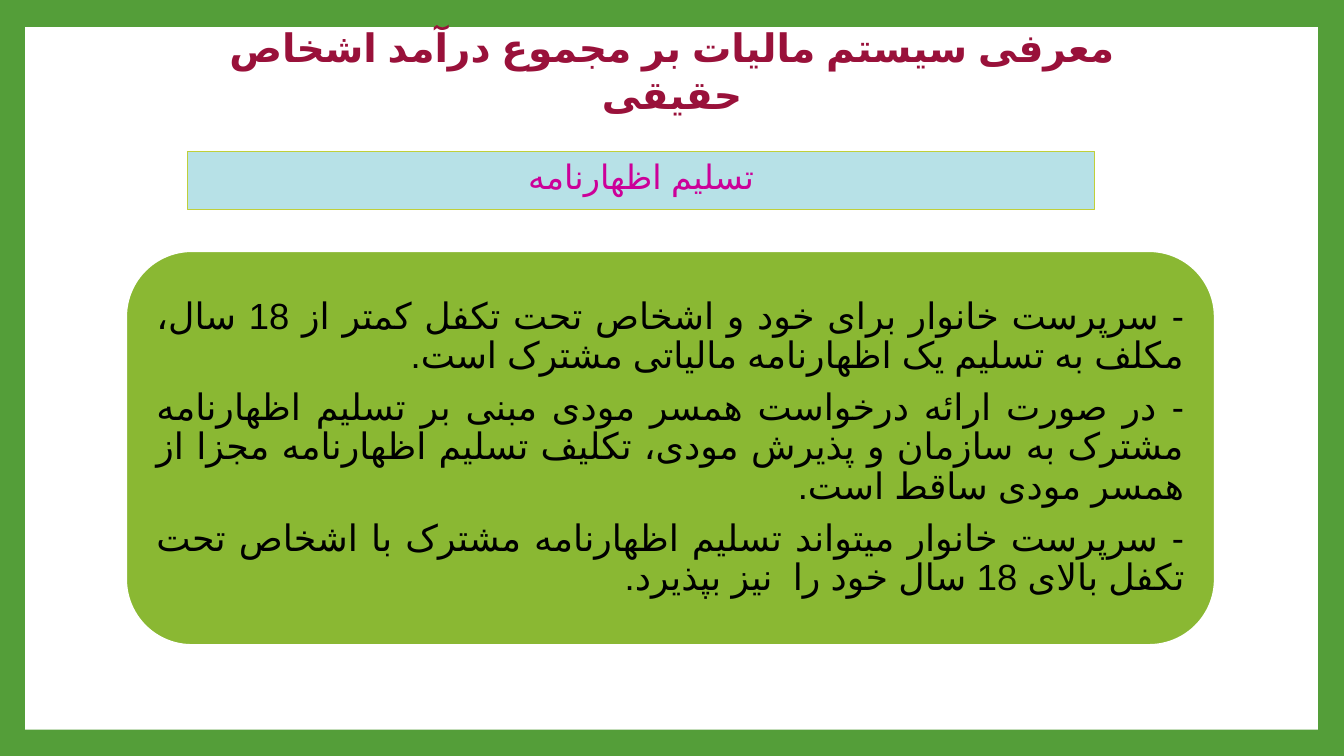
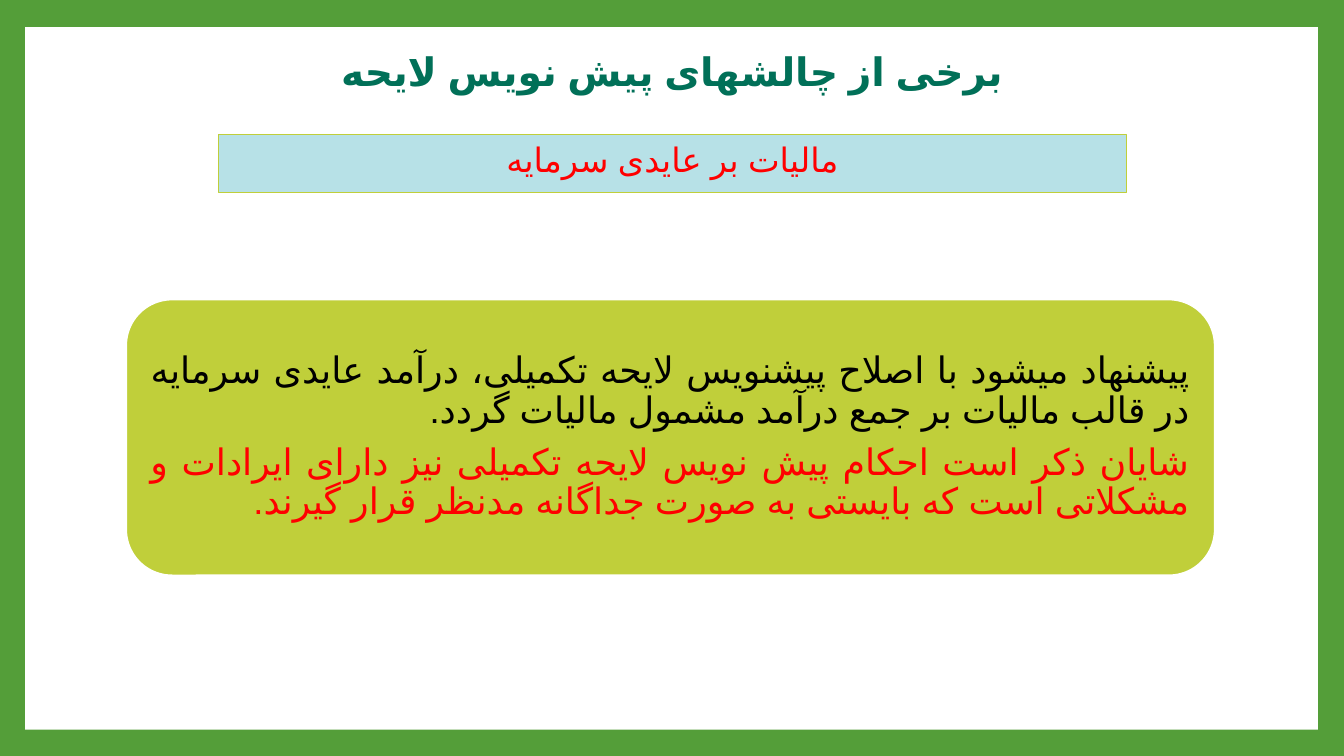
from pptx import Presentation
from pptx.dml.color import RGBColor
from pptx.enum.shapes import MSO_SHAPE as SHAPE
from pptx.enum.text import MSO_ANCHOR as ANCHOR, PP_ALIGN as ALIGN
from pptx.oxml.ns import qn
from pptx.util import Inches, Pt
from lxml import etree

SLIDE_W, SLIDE_H = 13.33, 7.5
GREEN, WHITE, LIME, SKY = "549E39", "FFFFFF", "C0CF3A", "B7E1E7"
OLIVE, BLACK, RED = "8AB833", "000000", "FF0000"
MAGENTA, WINE, TEAL = "CC0099", "99113A", "017058"
TITLE_FONT, BAND_FONT = "Arial Narrow", "Calibri"
ARABIC_FONT = "Arial"
HEADING_W, HEADING_H = 9, 0.58
CARD_X, CARD_W = 1.25, 10.8

SLIDES = [
    dict(
        title=("معرفی سیستم مالیات بر مجموع درآمد اشخاص حقیقی", WINE),
        band=("تسلیم اظهارنامه", MAGENTA), band_at=(1.86, 1.5),
        card_top=2.49, card_height=3.91, card_fill=OLIVE, card_font="Calibri",
        card=[
            ("- سرپرست خانوار برای خود و اشخاص تحت تکفل کمتر از 18 سال، "
             "مکلف به تسلیم یک اظهارنامه مالیاتی مشترک است.", BLACK),
            ("- در صورت ارائه درخواست همسر مودی مبنی بر تسلیم اظهارنامه "
             "مشترک به سازمان و پذیرش مودی، تکلیف تسلیم اظهارنامه مجزا از "
             "همسر مودی ساقط است.", BLACK),
            ("- سرپرست خانوار میتواند تسلیم اظهارنامه مشترک با اشخاص تحت "
             "تکفل بالای 18 سال خود را  نیز بپذیرد.", BLACK),
        ],
    ),
    dict(
        title=("برخی از چالشهای پیش نویس لایحه", TEAL),
        band=("مالیات بر عایدی سرمایه", RED), band_at=(2.17, 1.33),
        card_top=2.97, card_height=2.74, card_fill=LIME,
        card_font="Times New Roman",
        card=[
            ("پیشنهاد میشود با اصلاح پیشنویس لایحه تکمیلی، درآمد عایدی "
             "سرمایه در قالب مالیات بر جمع درآمد مشمول مالیات گردد.", BLACK),
            ("شایان ذکر است احکام پیش نویس لایحه تکمیلی نیز دارای ایرادات و "
             "مشکلاتی است که بایستی به صورت جداگانه مدنظر قرار گیرند.", RED),
        ],
    ),
]


def rgb(color):
    return RGBColor.from_string(color)


def add_box(s, kind, box, fill, line=None, width=0):
    sp = s.shapes.add_shape(kind, *map(Inches, box))
    sp.shadow.inherit = False
    sp.fill.solid()
    sp.fill.fore_color.rgb = rgb(fill)
    if line:
        sp.line.color.rgb = rgb(line)
        sp.line.width = Pt(width)
    else:
        sp.line.fill.background()
    return sp


def write(sp, paragraphs, font, size, align=ALIGN.CENTER, anchor=ANCHOR.MIDDLE,
          bold=False):
    """Fill a shape with right-to-left paragraphs of (text, colour)."""
    tf = sp.text_frame
    tf.word_wrap = True
    tf.vertical_anchor = anchor
    for i, (text, color) in enumerate(paragraphs):
        p = tf.add_paragraph() if i else tf.paragraphs[0]
        p.text = text
        p.alignment = align
        p._p.get_or_add_pPr().set("rtl", "1")
        r = p.runs[0]
        r.font.name, r.font.size, r.font.bold = font, Pt(size), bold
        r.font.color.rgb = rgb(color)
        rPr = r._r.get_or_add_rPr()
        rPr.set("lang", "fa-IR")
        etree.SubElement(rPr, qn("a:cs")).set("typeface", ARABIC_FONT)
    return tf


def add_frame(s):
    """Green background with the white panel that leaves a border."""
    s.background.fill.solid()
    s.background.fill.fore_color.rgb = rgb(GREEN)
    add_box(s, SHAPE.RECTANGLE, (0.25, 0.27, 12.82, 6.97), WHITE)


def add_title(s, title):
    box = ((SLIDE_W - HEADING_W) / 2, 0.41, HEADING_W, HEADING_H)
    sp = s.shapes.add_textbox(*map(Inches, box))
    write(sp, [title], TITLE_FONT, 28, bold=True)


def add_band(s, band, at):
    sp = add_box(s, SHAPE.RECTANGLE, (*at, HEADING_W, HEADING_H), SKY, LIME, 0.79)
    write(sp, [band], BAND_FONT, 24, anchor=ANCHOR.TOP)


def add_card(s, box, fill, paragraphs, font):
    sp = add_box(s, SHAPE.ROUNDED_RECTANGLE, box, fill, WHITE, 1.5)
    tf = write(sp, paragraphs, font, 26, align=ALIGN.JUSTIFY)
    tf.margin_left = tf.margin_right = Inches(0.11)
    tf.margin_top = tf.margin_bottom = Inches(0.11)
    for p in tf.paragraphs:
        p.line_spacing = 0.9
        p.space_after = Pt(9.1)


def add_topic_slide(prs, topic):
    s = prs.slides.add_slide(prs.slide_layouts[6])
    add_frame(s)
    add_title(s, topic["title"])
    add_band(s, topic["band"], topic["band_at"])
    box = (CARD_X, topic["card_top"], CARD_W, topic["card_height"])
    add_card(s, box, topic["card_fill"], topic["card"], topic["card_font"])


def main():
    prs = Presentation()
    prs.slide_width, prs.slide_height = Inches(SLIDE_W), Inches(SLIDE_H)
    for topic in SLIDES:
        add_topic_slide(prs, topic)
    prs.save("out.pptx")


if __name__ == "__main__":
    main()
